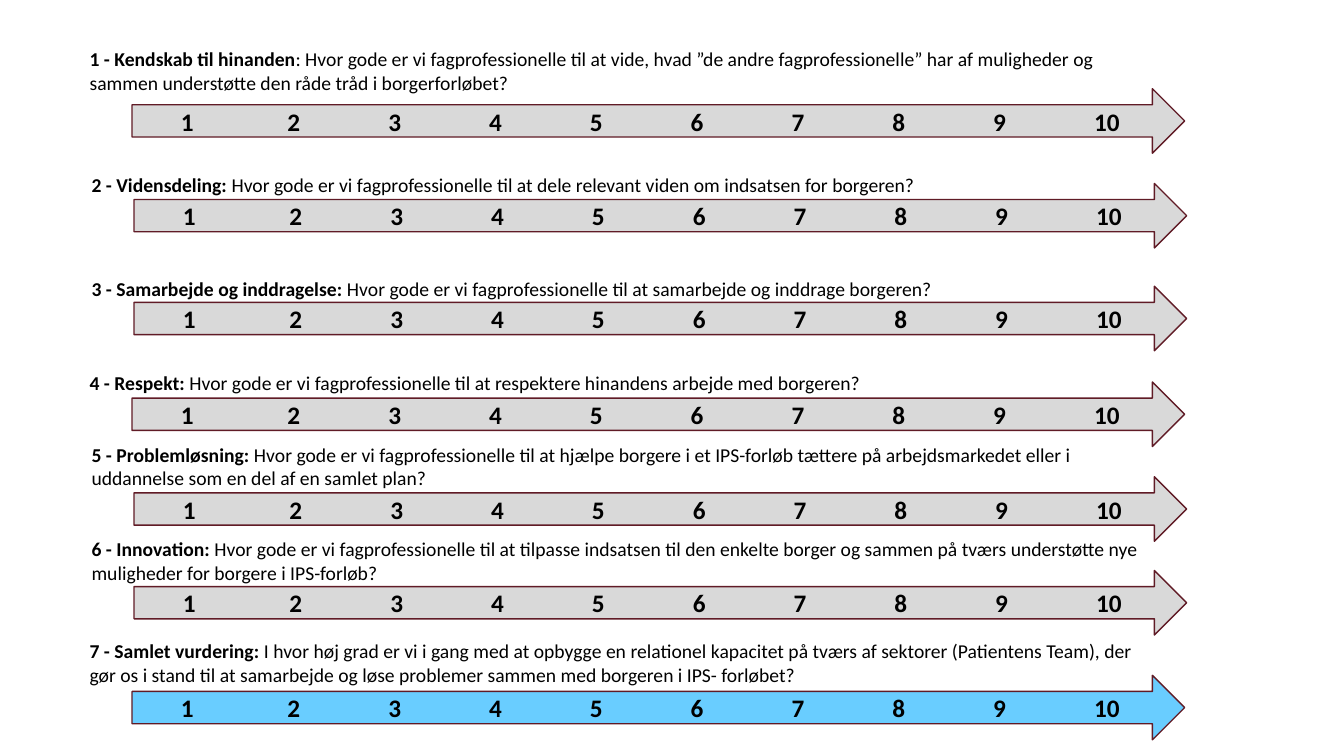
from lxml.etree import SubElement
from pptx import Presentation
from pptx.dml.color import RGBColor
from pptx.enum.shapes import MSO_SHAPE
from pptx.enum.text import MSO_ANCHOR, MSO_AUTO_SIZE, PP_ALIGN
from pptx.oxml.ns import qn
from pptx.util import Inches, Pt

BLACK = RGBColor(0x00, 0x00, 0x00)
GREY = RGBColor(0xD9, 0xD9, 0xD9)
SKY_BLUE = RGBColor(0x66, 0xCC, 0xFF)
BURGUNDY = RGBColor(0x60, 0x1B, 0x26)

SCALE = "\t ".join(str(score) for score in range(1, 11))

# heading, question, left offset, question top, question height, arrow top
QUESTIONS = [
    ("1 - Kendskab til hinanden",
     ": Hvor gode er vi fagprofessionelle til at vide, hvad ”de andre fagprofessionelle” "
     "har af muligheder og sammen understøtte den råde tråd i borgerforløbet?",
     0.79, 0.42, 0.57, 0.88),
    ("2 - Vidensdeling:",
     " Hvor gode er vi fagprofessionelle til at dele relevant viden om indsatsen for borgeren?",
     0.81, 1.67, 0.34, 1.82),
    ("3 - Samarbejde og inddragelse:",
     " Hvor gode er vi fagprofessionelle til at samarbejde og inddrage borgeren?",
     0.81, 2.7, 0.34, 2.84),
    ("4 - Respekt:",
     " Hvor gode er vi fagprofessionelle til at respektere hinandens arbejde med borgeren?",
     0.79, 3.63, 0.34, 3.79),
    ("5 - Problemløsning:",
     " Hvor gode er vi fagprofessionelle til at hjælpe borgere i et IPS-forløb tættere på "
     "arbejdsmarkedet eller i uddannelse som en del af en samlet plan?",
     0.81, 4.34, 0.57, 4.73),
    ("6 - Innovation:",
     " Hvor gode er vi fagprofessionelle til at tilpasse indsatsen til den enkelte borger og "
     "sammen på tværs understøtte nye muligheder for borgere i IPS-forløb?",
     0.81, 5.28, 0.57, 5.66),
    ("7 - Samlet vurdering:",
     " I hvor høj grad er vi i gang med at opbygge en relationel kapacitet på tværs af "
     "sektorer (Patientens Team), der gør os i stand til at samarbejde og løse problemer "
     "sammen med borgeren i IPS- forløbet?",
     0.79, 6.29, 0.57, 6.7),
]


class Questionnaire:
    """Holds the slide and the text styles of its questions and scales."""

    base_font = {"name": "Calibri"}
    scale_font = base_font | {"size": Pt(18), "bold": True}
    heading_font = base_font | {"size": Pt(14), "bold": True}
    question_font = heading_font | {"bold": False}

    def __init__(self, slide):
        self.slide = slide

    def add_text(self, paragraph, text, style):
        run = paragraph.add_run()
        run.text = text
        for attribute, value in style.items():
            setattr(run.font, attribute, value)
        run.font.color.rgb = BLACK

    def question(self, heading, wording, left, top, height):
        box = self.slide.shapes.add_textbox(
            Inches(left), Inches(top), Inches(10.65), Inches(height))
        frame = box.text_frame
        frame.word_wrap = True
        frame.auto_size = MSO_AUTO_SIZE.SHAPE_TO_FIT_TEXT
        self.add_text(frame.paragraphs[0], heading, self.heading_font)
        self.add_text(frame.paragraphs[0], wording, self.question_font)

    def scale_arrow(self, left, top, color, opacity=100):
        arrow = self.slide.shapes.add_shape(
            MSO_SHAPE.RIGHT_ARROW, Inches(left), Inches(top), Inches(10.44), Inches(0.64))
        arrow.shadow.inherit = False
        arrow.fill.solid()
        arrow.fill.fore_color.rgb = color
        if opacity < 100:
            fill_color = arrow._element.spPr.find(qn("a:solidFill"))[0]
            SubElement(fill_color, qn("a:alpha"), val=str(opacity * 1000))
        arrow.line.color.rgb = BURGUNDY
        arrow.line.width = Pt(1)
        frame = arrow.text_frame
        frame.word_wrap = True
        frame.vertical_anchor = MSO_ANCHOR.MIDDLE
        scores = frame.paragraphs[0]
        scores.alignment = PP_ALIGN.CENTER
        scores._p.get_or_add_pPr().set("defTabSz", str(Inches(1)))
        self.add_text(scores, SCALE, self.scale_font)


def main():
    deck = Presentation()
    deck.slide_width, deck.slide_height = Inches(13.33), Inches(7.5)
    blank_layout = deck.slide_layouts[6]
    questionnaire = Questionnaire(deck.slides.add_slide(blank_layout))
    for heading, wording, left, top, height, arrow_top in QUESTIONS:
        overall = heading == QUESTIONS[-1][0]
        color, opacity = (SKY_BLUE, 98) if overall else (GREY, 100)
        questionnaire.scale_arrow(left + 0.52, arrow_top, color, opacity)
        questionnaire.question(heading, wording, left, top, height)
    deck.save("out.pptx")


if __name__ == "__main__":
    main()
